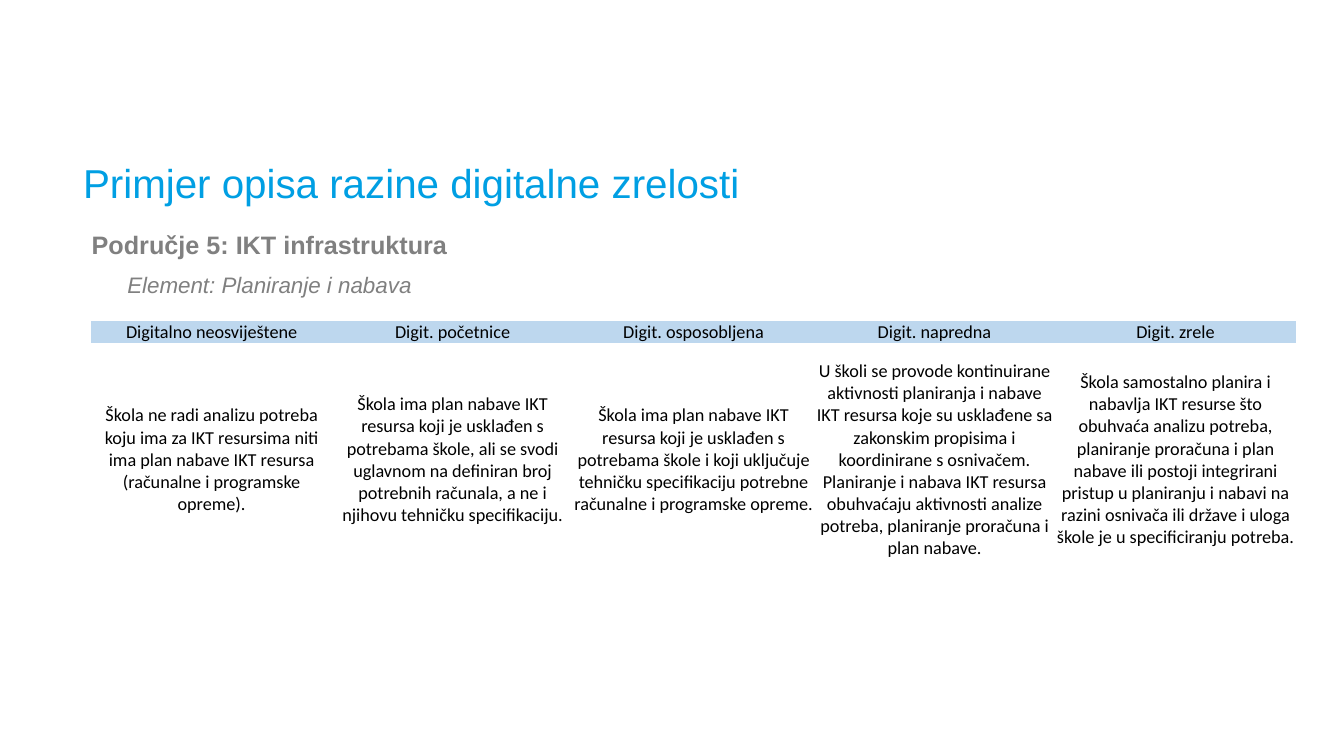
from pptx import Presentation
from pptx.dml.color import RGBColor
from pptx.enum import text
from pptx.oxml import ns
from pptx.util import Pt

PX = 9071  # EMU in one px, at 100.8 px to the inch
BLUE = RGBColor(0x00, 0x9F, 0xE3)
GREY = RGBColor(0x80, 0x80, 0x80)
BLACK = RGBColor(0x00, 0x00, 0x00)
PALE_BLUE = RGBColor(0xBD, 0xD7, 0xEE)
NO_STYLE_NO_GRID = "{2D5ABB26-0587-4C30-8999-92F81FD0307C}"

LEVELS = [
    ("Digitalno neosviještene",
     "Škola ne radi analizu potreba koju ima za IKT resursima niti ima plan "
     "nabave IKT resursa (računalne i programske opreme)."),
    ("Digit. početnice",
     "Škola ima plan nabave IKT resursa koji je usklađen s potrebama škole, "
     "ali se svodi uglavnom na definiran broj potrebnih računala, a ne i "
     "njihovu tehničku specifikaciju."),
    ("Digit. osposobljena",
     "Škola ima plan nabave IKT resursa koji je usklađen s potrebama škole i "
     "koji uključuje tehničku specifikaciju potrebne računalne i programske "
     "opreme."),
    ("Digit. napredna",
     "U školi se provode kontinuirane aktivnosti planiranja i nabave IKT "
     "resursa koje su usklađene sa zakonskim propisima i koordinirane s "
     "osnivačem. Planiranje i nabava IKT resursa obuhvaćaju aktivnosti "
     "analize potreba, planiranje proračuna i plan nabave."),
    ("Digit. zrele",
     "Škola samostalno planira i nabavlja IKT resurse što obuhvaća analizu "
     "potreba, planiranje proračuna i plan nabave ili postoji integrirani "
     "pristup u planiranju i nabavi na razini osnivača ili države i uloga "
     "škole je u specificiranju potreba."),
]


def style_font(font, name, size, color):
    font.name = name
    font.size = Pt(size)
    font.color.rgb = color


deck = Presentation()
deck.slide_width, deck.slide_height = 1344 * PX, 756 * PX
page = deck.slides.add_slide(deck.slide_layouts[5])

# Title
title = page.shapes.title
title.left, title.top, title.width, title.height = 73 * PX, 153 * PX, 1159 * PX, 59 * PX
title.text_frame.text = "Primjer opisa razine digitalne zrelosti"
title.text_frame.vertical_anchor = text.MSO_ANCHOR.BOTTOM
para = title.text_frame.paragraphs[0]
para.alignment = text.PP_ALIGN.LEFT
para.line_spacing = 0.9
style_font(para.runs[0].font, "Arial", 28.8, BLUE)

# Area and element
heading = page.shapes.add_textbox(73 * PX, 228 * PX, 393 * PX, 77 * PX).text_frame
heading.word_wrap = True
heading.text = "Područje 5: IKT infrastruktura\nElement: Planiranje i nabava"
for para, size in zip(heading.paragraphs, (18, 16)):
    para.alignment = text.PP_ALIGN.CENTER
    para.line_spacing = 0.9
    style_font(para.runs[0].font, "Arial", size, GREY)
area, element = heading.paragraphs
area.runs[0].font.bold = True
element.runs[0].font.italic = True
element.space_before = Pt(10)

# Maturity levels
table = page.shapes.add_table(2, len(LEVELS), 91 * PX, 321 * PX, 1205 * PX, 256 * PX).table
table.first_row = False
table.horz_banding = False
table._tbl.tblPr.find(ns.qn("a:tableStyleId")).text = NO_STYLE_NO_GRID
table.rows[0].height, table.rows[1].height = 22 * PX, 234 * PX
for column, level in enumerate(LEVELS):
    table.columns[column].width = 241 * PX
    for row, wording in enumerate(level):
        cell = table.cell(row, column)
        cell.text = wording
        cell.vertical_anchor = text.MSO_ANCHOR.MIDDLE
        cell.margin_left = cell.margin_right = PX
        cell.margin_top = cell.margin_bottom = 0
        para = cell.text_frame.paragraphs[0]
        para.alignment = text.PP_ALIGN.CENTER
        style_font(para.runs[0].font, "Calibri", 13, BLACK)
        if row == 0:
            cell.fill.solid()
            cell.fill.fore_color.rgb = PALE_BLUE
        else:
            cell.fill.background()

deck.save("out.pptx")
